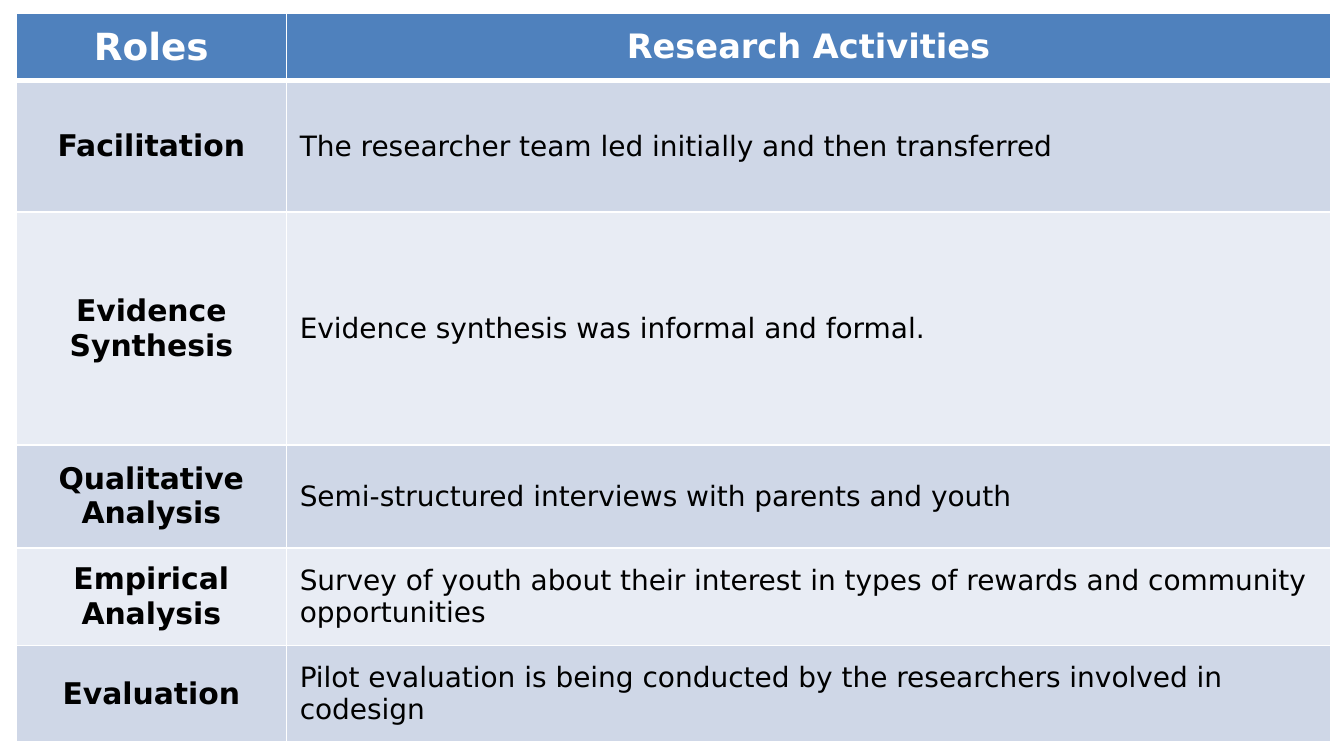
from dataclasses import dataclass

from lxml import etree
from pptx import Presentation
from pptx.dml.color import RGBColor
from pptx.enum.text import MSO_ANCHOR, PP_ALIGN
from pptx.oxml.ns import qn
from pptx.table import _Cell
from pptx.util import Pt

LEFT, CENTER = PP_ALIGN.LEFT, PP_ALIGN.CENTER
MIDDLE = MSO_ANCHOR.MIDDLE

WHITE = RGBColor(0xFF, 0xFF, 0xFF)
BLACK = RGBColor(0x00, 0x00, 0x00)
BLUE = RGBColor(0x4F, 0x81, 0xBD)
DARK = RGBColor(0xCF, 0xD7, 0xE7)
LIGHT = RGBColor(0xE8, 0xEC, 0xF4)

FONT = "DejaVu Sans"
WIDTHS = (144.6, 559.6)


@dataclass(frozen=True)
class Row:
    role: str
    task: str
    height: float


HEAD = Row("Roles", "Research Activities", 36)
ROWS = (
    Row("Facilitation", "The researcher team led initially and then transferred", 70.4),
    Row("Evidence Synthesis", "Evidence synthesis was informal and formal.", 124.6),
    Row("Qualitative Analysis", "Semi-structured interviews with parents and youth", 55.2),
    Row("Empirical Analysis",
        "Survey of youth about their interest in types of rewards and community opportunities",
        52.4),
    Row("Evaluation",
        "Pilot evaluation is being conducted by the researchers involved in codesign", 51.8),
)


def write(cell: _Cell, text: str, *, size: float, color: RGBColor,
          bold: bool = True, align: PP_ALIGN = CENTER) -> None:
    cell.vertical_anchor = MIDDLE
    para = cell.text_frame.paragraphs[0]
    para.alignment = align
    run = para.add_run()
    run.text = text
    font = run.font
    font.name, font.size, font.bold = FONT, Pt(size), bold
    font.color.rgb = color


def paint(cell: _Cell, fill: RGBColor, top: float = 1, base: float = 1) -> None:
    """Give the cell its fill and white borders, with widths in points."""
    props = cell._tc.get_or_add_tcPr()
    for side, width in (("L", 1), ("R", 1), ("T", top), ("B", base)):
        line = etree.SubElement(props, qn(f"a:ln{side}"), w=str(Pt(width)))
        solid = etree.SubElement(line, qn("a:solidFill"))
        etree.SubElement(solid, qn("a:srgbClr"), val=str(WHITE))
    cell.fill.solid()
    cell.fill.fore_color.rgb = fill


def main() -> None:
    deck = Presentation()
    deck.slide_width, deck.slide_height = Pt(720), Pt(405)
    slide = deck.slides.add_slide(deck.slide_layouts[6])

    rows = (HEAD, *ROWS)
    high = sum(row.height for row in rows)
    table = slide.shapes.add_table(len(rows), len(WIDTHS), Pt(8.8), Pt(7.3),
                                   Pt(sum(WIDTHS)), Pt(high)).table
    for col, width in zip(table.columns, WIDTHS):
        col.width = Pt(width)
    for line, row in zip(table.rows, rows):
        line.height = Pt(row.height)

    for cell, text, size in zip(table.rows[0].cells, (HEAD.role, HEAD.task), (20, 18)):
        paint(cell, BLUE, base=3)
        write(cell, text, size=size, color=WHITE)

    for i, row in enumerate(ROWS, 1):
        role, task = table.rows[i].cells
        for cell in (role, task):
            paint(cell, DARK if i % 2 else LIGHT, top=3 if i == 1 else 1)
        write(role, row.role, size=16, color=BLACK)
        write(task, row.task, size=15, color=BLACK, bold=False, align=LEFT)

    deck.save("out.pptx")


if __name__ == "__main__":
    main()
